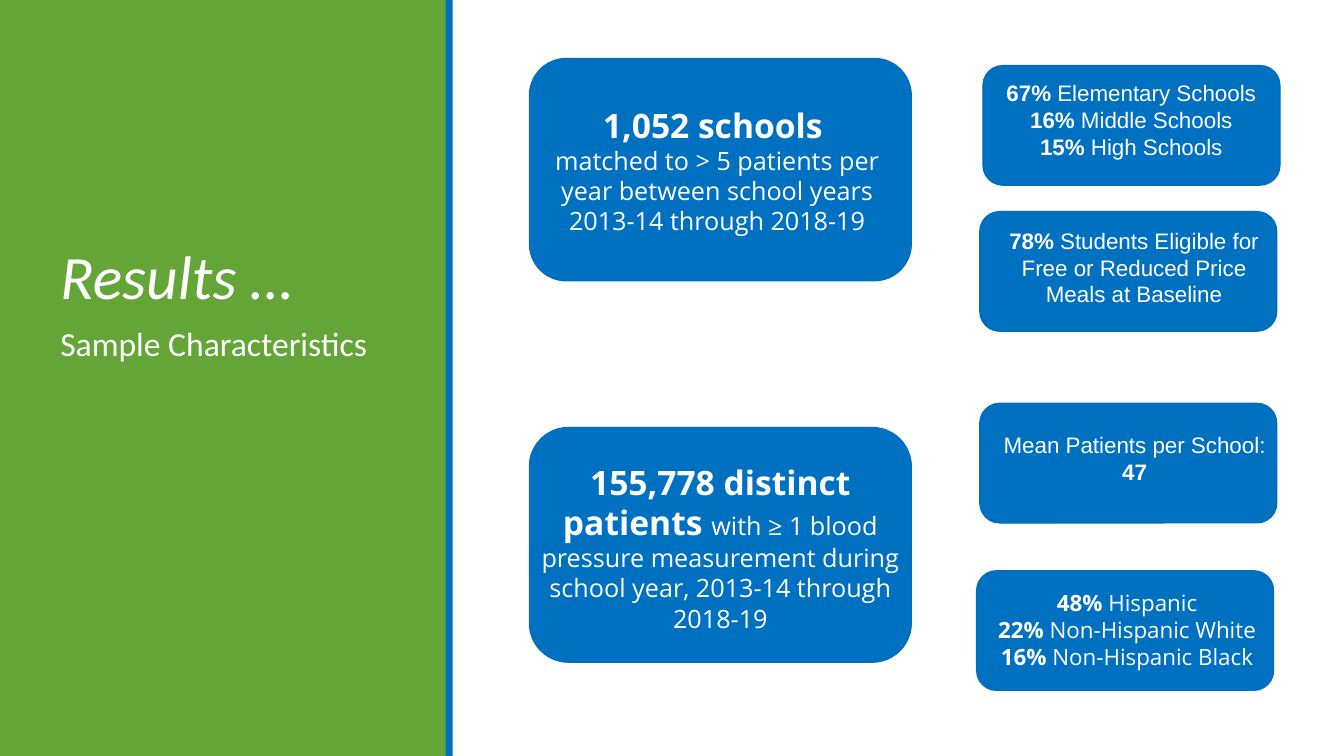
"""Build the sample characteristics results slide."""
from dataclasses import dataclass

from pptx import Presentation
from pptx.dml.color import RGBColor
from pptx.enum.shapes import MSO_SHAPE as Preset
from pptx.enum.text import MSO_ANCHOR as Anchor, MSO_AUTO_SIZE as AutoSize, PP_ALIGN as Align
from pptx.shapes.autoshape import Shape
from pptx.slide import Slide
from pptx.text.text import Font, TextFrame
from pptx.util import Cm, Pt

GREEN = RGBColor(0x63, 0xA5, 0x37)
BLUE = RGBColor(0x00, 0x70, 0xC0)
EDGE_BLUE = RGBColor(0x00, 0x6D, 0xBF)
WHITE = RGBColor(0xFF, 0xFF, 0xFF)

HEADLINE, DETAIL, FACT = 24, 18, 16


@dataclass(frozen=True)
class Box:
    """Position and size in centimetres."""
    left: float
    top: float
    width: float
    height: float

    def lengths(self) -> tuple[Cm, Cm, Cm, Cm]:
        """Return the four lengths in the order python-pptx takes them."""
        return Cm(self.left), Cm(self.top), Cm(self.width), Cm(self.height)


@dataclass(frozen=True)
class Phrase:
    """A stretch of text in one size and weight."""
    text: str
    size: int
    bold: bool = False


@dataclass(frozen=True)
class Card:
    """A rounded card and the text laid over it."""
    frame: Box
    text_box: Box
    font: str
    lines: list[list[Phrase]]


def share(percent: str, group: str) -> list[Phrase]:
    """Return a line with a bold percentage and its group."""
    return [Phrase(f"{percent} ", FACT, True), Phrase(group, FACT)]


CARDS = [
    Card(Box(13.34, 1.47, 9.63, 5.61), Box(13.26, 2.51, 9.63, 3.58), "Open Sans", [
        [Phrase("1,052 schools ", HEADLINE, True)],
        [Phrase("matched to > 5 patients per year between school years "
                "2013-14 through 2018-19", DETAIL)],
    ]),
    Card(Box(13.34, 10.77, 9.63, 5.92), Box(13.34, 11.51, 9.63, 4.62), "Open Sans", [
        [Phrase("155,778 distinct patients ", HEADLINE, True),
         Phrase("with ≥ 1 blood pressure measurement during school year, "
                "2013-14 through 2018-19", DETAIL)],
    ]),
    Card(Box(24.77, 1.65, 7.49, 3.02), Box(25.07, 1.88, 6.88, 2.31), "Arial", [
        share("67%", "Elementary Schools"),
        share("16%", "Middle Schools"),
        share("15%", "High Schools"),
    ]),
    Card(Box(24.69, 5.33, 7.49, 3.02), Box(24.92, 5.59, 7.32, 2.31), "Arial", [
        share("78%", "Students Eligible for Free or Reduced Price Meals at Baseline"),
    ]),
    Card(Box(24.69, 10.16, 7.49, 3.02), Box(25.04, 10.74, 7.11, 1.63), "Arial", [
        [Phrase("Mean Patients per School:", FACT), Phrase(" 47", FACT, True)],
    ]),
    Card(Box(24.61, 14.38, 7.49, 3.02), Box(24.61, 14.73, 7.59, 2.39), "Open Sans", [
        share("48%", "Hispanic"),
        share("22%", "Non-Hispanic White"),
        share("16%", "Non-Hispanic Black"),
    ]),
]


def style_font(font: Font, name: str, size: int, bold: bool = False, italic: bool = False) -> None:
    """Apply a white font."""
    font.name = name
    font.size = Pt(size)
    font.bold = bold
    font.italic = italic
    font.color.rgb = WHITE


def add_block(slide: Slide, preset: Preset, box: Box, fill: RGBColor) -> Shape:
    """Add a flat filled shape without an outline."""
    block = slide.shapes.add_shape(preset, *box.lengths())
    block.shadow.inherit = False
    block.fill.solid()
    block.fill.fore_color.rgb = fill
    block.line.fill.background()
    return block


def add_card(slide: Slide, card: Card) -> None:
    """Add a rounded card with its centred text."""
    frame = add_block(slide, Preset.ROUNDED_RECTANGLE, card.frame, BLUE)
    frame.line.color.rgb = EDGE_BLUE
    frame.line.width = Pt(0.75)
    content = slide.shapes.add_textbox(*card.text_box.lengths()).text_frame
    content.word_wrap = True
    content.auto_size = AutoSize.SHAPE_TO_FIT_TEXT
    for index, line in enumerate(card.lines):
        paragraph = content.add_paragraph() if index else content.paragraphs[0]
        paragraph.alignment = Align.CENTER
        for phrase in line:
            run = paragraph.add_run()
            run.text = phrase.text
            style_font(run.font, card.font, phrase.size, phrase.bold)


def fill_heading(heading: TextFrame, text: str, size: int, spacing: float, italic: bool) -> None:
    """Write one left-aligned heading on the side panel."""
    heading.text = text
    heading.word_wrap = True
    heading.auto_size = AutoSize.NONE
    paragraph = heading.paragraphs[0]
    paragraph.alignment = Align.LEFT
    paragraph.line_spacing = spacing
    style_font(paragraph.runs[0].font, "Calibri", size, italic=italic)


def main() -> None:
    """Build and save the slide."""
    deck = Presentation()
    deck.slide_width, deck.slide_height = Cm(33.87), Cm(19.05)
    slide = deck.slides.add_slide(deck.slide_layouts[5])

    title = slide.shapes.title
    for box, color in ((Box(0, 0, 11.25, 19.05), GREEN), (Box(11.23, 0, 0.18, 19.05), BLUE)):
        title.element.addprevious(add_block(slide, Preset.RECTANGLE, box, color).element)

    title.left, title.top, title.width, title.height = Box(1.27, 1.65, 8.89, 6.35).lengths()
    fill_heading(title.text_frame, "Results …", 44, 0.85, True)
    title.text_frame.vertical_anchor = Anchor.BOTTOM

    subtitle = slide.shapes.add_textbox(*Box(1.27, 8.13, 8.89, 9.4).lengths())
    fill_heading(subtitle.text_frame, "Sample Characteristics", 24, 0.9, False)

    for card in CARDS:
        add_card(slide, card)
    deck.save("out.pptx")


if __name__ == "__main__":
    main()
